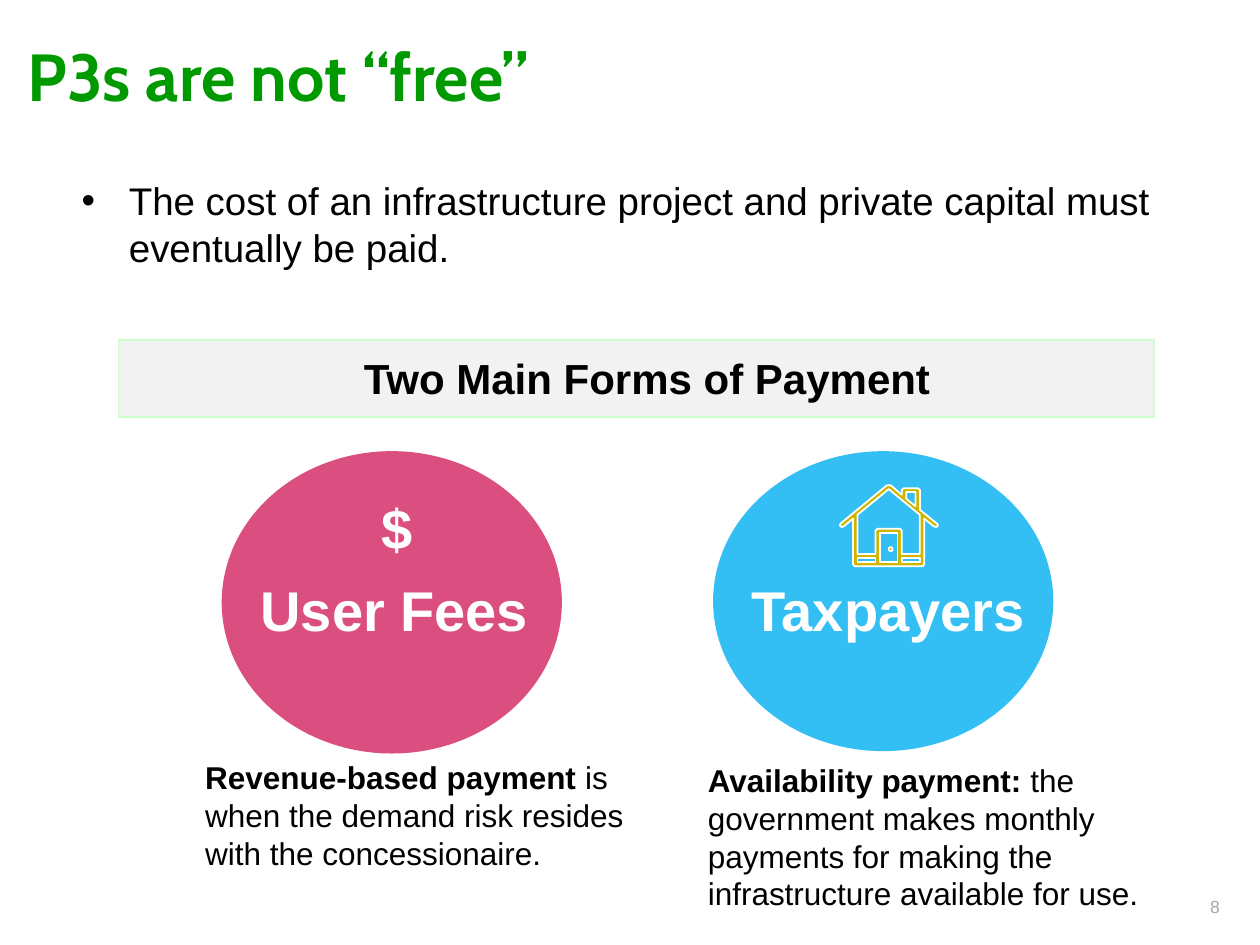
from dataclasses import dataclass
from math import cos, pi, sin

from lxml import etree
from pptx import Presentation
from pptx.dml.color import RGBColor
from pptx.enum.shapes import MSO_SHAPE
from pptx.enum.text import MSO_ANCHOR, PP_ALIGN
from pptx.oxml.ns import qn
from pptx.util import Pt

RECTANGLE, OVAL = MSO_SHAPE.RECTANGLE, MSO_SHAPE.OVAL
LEFT, CENTER, RIGHT = PP_ALIGN.LEFT, PP_ALIGN.CENTER, PP_ALIGN.RIGHT
TOP, MIDDLE = MSO_ANCHOR.TOP, MSO_ANCHOR.MIDDLE


@dataclass(frozen=True)
class Theme:
    heading_font: str = "Cabin"
    body_font: str = "Arial"
    green: str = "009900"
    black: str = "000000"
    white: str = "FFFFFF"
    gray: str = "A6A6A6"
    banner_fill: str = "F2F2F2"
    banner_line: str = "CCFFCC"
    pink: str = "D22261"
    blue: str = "00B0F0"
    gold: str = "CEB500"
    title_size: float = 38
    label_size: float = 32
    banner_size: float = 24
    bullet_size: float = 22
    note_size: float = 18
    number_size: float = 10


class SlideBuilder:
    def __init__(self, slide, theme):
        self.slide = slide
        self.theme = theme

    def paint(self, shape, fill, line=None, opacity=None):
        shape.shadow.inherit = False
        shape.fill.solid()
        shape.fill.fore_color.rgb = RGBColor.from_string(fill)
        if opacity:
            color = shape.fill._xPr.find(qn("a:solidFill"))[0]
            etree.SubElement(color, qn("a:alpha"), val=str(opacity * 1000))
        if line:
            shape.line.color.rgb = RGBColor.from_string(line)
            shape.line.width = Pt(1)
        else:
            shape.line.fill.background()

    def shape(self, kind, box, fill, line=None, opacity=None):
        shape = self.slide.shapes.add_shape(kind, *map(Pt, box))
        self.paint(shape, fill, line, opacity)

    def text(self, box, runs, size, color=None, font=None, align=LEFT,
             anchor=TOP, wrap=True):
        """Add one paragraph; runs are (text, bold) pairs."""
        frame = self.slide.shapes.add_textbox(*map(Pt, box)).text_frame
        frame.word_wrap = wrap
        frame.vertical_anchor = anchor
        paragraph = frame.paragraphs[0]
        paragraph.alignment = align
        for words, bold in runs:
            run = paragraph.add_run()
            run.text = words
            run.font.size = Pt(size)
            run.font.bold = bold
            run.font.name = font or self.theme.body_font
            run.font.color.rgb = RGBColor.from_string(color or self.theme.black)
        return frame

    def bullet(self, box, words, size, indent):
        frame = self.text(box, [(words, False)], size)
        properties = frame.paragraphs[0]._p.get_or_add_pPr()
        properties.set("marL", str(Pt(indent)))
        properties.set("indent", str(-Pt(indent)))
        etree.SubElement(properties, qn("a:buFont"), typeface="Arial")
        etree.SubElement(properties, qn("a:buChar"), char="•")

    def label(self, box, words):
        frame = self.text(box, [(words, True)], self.theme.label_size,
                          self.theme.white, align=CENTER)
        frame.margin_left = frame.margin_right = 0
        frame.margin_top = frame.margin_bottom = 0
        frame.paragraphs[0].line_spacing = Pt(34.6)

    def outline(self, left, top, contours, fill, line):
        """Draw closed contours, given in points, as one shape."""
        units = [[(round(x * 10), round(y * 10)) for x, y in contour]
                 for contour in contours]
        builder = self.slide.shapes.build_freeform(*units[0][0], scale=Pt(0.1))
        for number, contour in enumerate(units):
            if number:
                builder.move_to(*contour[0])
            builder.add_line_segments(contour[1:], close=True)
        self.paint(builder.convert_to_shape(Pt(left), Pt(top)), fill, line)


def rectangle(left, top, right, bottom):
    return [(left, top), (right, top), (right, bottom), (left, bottom)]


def house_contours():
    """Outer edge first, then the openings inside it."""
    silhouette = [
        (0.3, 22), (26.6, 0.3), (28, 0), (29.3, 0.3), (35.3, 5.5), (35.3, 2.8),
        (36.4, 1.8), (44.6, 1.8), (45.7, 2.8), (45.7, 14.1), (55.7, 22.2),
        (56, 23.2), (55, 24), (53.6, 23.6), (48.2, 19.2), (48.2, 45.3),
        (47.2, 46.4), (8.6, 46.4), (7.5, 45.3), (7.5, 19.2), (2.2, 23.6),
        (1, 24), (0, 23.2)]
    wall = [
        (45.6, 39.4), (35.3, 39.4), (35.3, 26), (34.2, 24.9), (21.4, 24.9),
        (20.3, 26), (20.3, 39.4), (10, 39.4), (10, 17), (27.9, 2.3), (45.6, 17)]
    chimney = [(37.9, 3.9), (43.2, 3.9), (43.2, 12.1), (37.9, 7.8)]
    knob = [(29 + 1.1 * cos(step * pi / 6), 36.6 + 1.1 * sin(step * pi / 6))
            for step in range(12)]
    return [silhouette, wall, chimney, knob,
            rectangle(35.3, 41.6, 45.6, 43.9),
            rectangle(22.8, 27.3, 32.9, 43.9),
            rectangle(10, 41.6, 20.3, 43.9)]


def main():
    theme = Theme()
    presentation = Presentation()
    presentation.slide_width, presentation.slide_height = Pt(720), Pt(540)
    slide = presentation.slides.add_slide(presentation.slide_layouts[6])
    builder = SlideBuilder(slide, theme)

    # Page number, title and opening statement
    builder.text((634.3, 508.3, 69.8, 19.4), [("8", False)], theme.number_size,
                 theme.gray, align=RIGHT)
    builder.text((8.6, 19.4, 702.7, 46.8), [("P3s are not “free”", True)],
                 theme.title_size, theme.green, theme.heading_font, anchor=MIDDLE)
    builder.bullet(
        (39.6, 97.9, 640.8, 60.5),
        "The cost of an infrastructure project and private capital must "
        "eventually be paid.", theme.bullet_size, 27)

    # Banner
    builder.shape(RECTANGLE, (67.7, 194.4, 591.8, 43.9),
                  theme.banner_fill, theme.banner_line)
    builder.text((200.9, 198, 341.3, 36), [("Two Main Forms of Payment", True)],
                 theme.banner_size, wrap=False)

    # Payment circles
    for left, height, fill in ((126.7, 172.8, theme.pink),
                               (407.5, 171.4, theme.blue)):
        builder.shape(OVAL, (left, 257.8, 194.4, height), fill, opacity=80)
    for left, top, words in ((89.3, 332.6, "User Fees"), (90.7, 285.8, "$"),
                             (371.5, 332.6, "Taxpayers")):
        builder.label((left, top, 272.2, 36.7), words)
    builder.outline(480, 277.2, house_contours(), theme.gold, theme.white)

    # Explanations below the circles
    for box, term, meaning in (
            ((110.2, 429.8, 261.4, 72.7), "Revenue-based payment ",
             "is when the demand risk resides with the concessionaire."),
            ((397.4, 431.3, 305.3, 94.3), "Availability payment: ",
             "the government makes monthly payments for making the "
             "infrastructure available for use.")):
        builder.text(box, [(term, True), (meaning, False)], theme.note_size)

    presentation.save("out.pptx")


if __name__ == "__main__":
    main()
